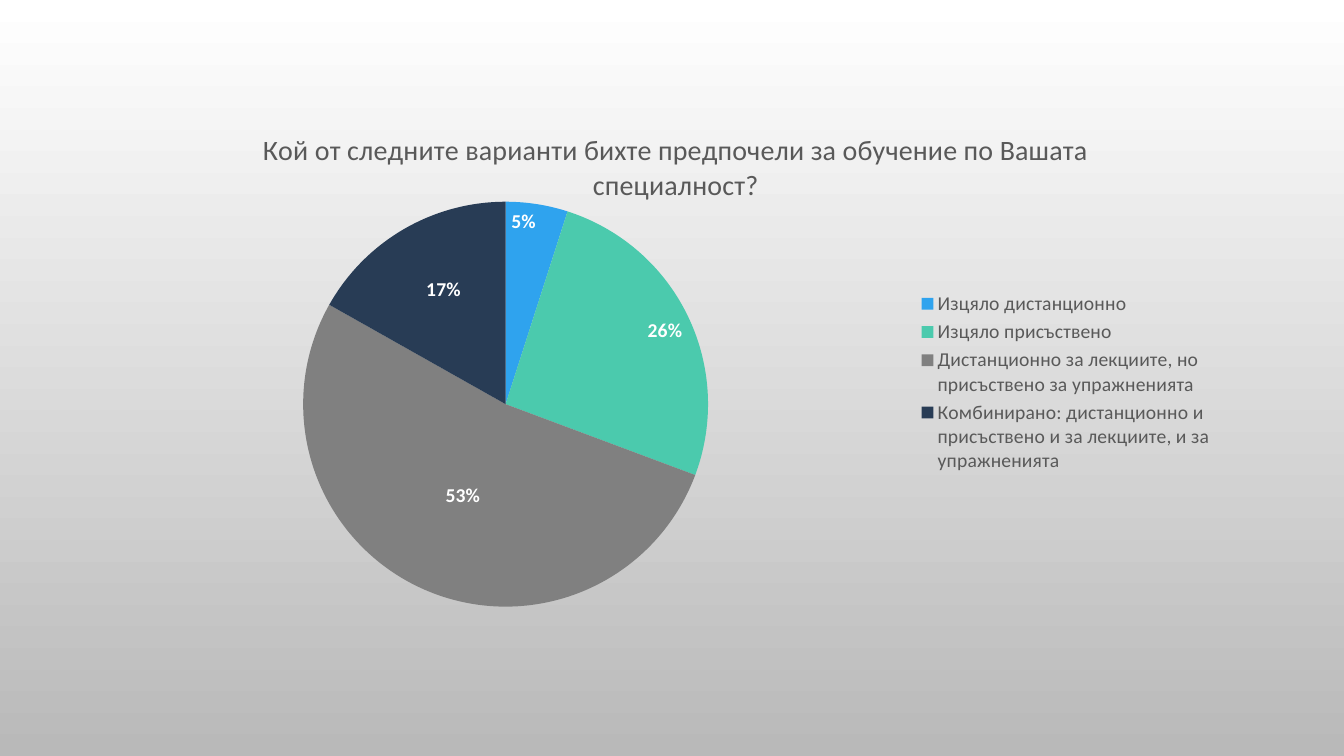
from lxml.etree import SubElement
from pptx import Presentation
from pptx.chart.data import CategoryChartData as ChartData
from pptx.dml.color import RGBColor
from pptx.enum.chart import XL_CHART_TYPE as Kind
from pptx.enum.chart import XL_LABEL_POSITION as Spot
from pptx.enum.chart import XL_LEGEND_POSITION as Side
from pptx.oxml import parse_xml
from pptx.oxml.ns import nsdecls, qn
from pptx.util import Cm, Pt

TITLE = "Кой от следните варианти бихте предпочели за обучение по Вашата специалност?"
SHARES = [
    ("Изцяло дистанционно", 5, "2FA3EE", Spot.INSIDE_END),
    ("Изцяло присъствено", 26, "4BCAAD", Spot.INSIDE_END),
    ("Дистанционно за лекциите, но присъствено за упражненията", 53, "808080", Spot.CENTER),
    ("Комбинирано: дистанционно и присъствено и за лекциите, и за упражненията", 17, "283C55", Spot.CENTER),
]
FORMAT = '0"%"'


def paint(code):
    return RGBColor.from_string(code)


def style(font, size, color, bold=False):
    font.name = "Calibri"
    font.size = Pt(size)
    font.bold = bold
    font.color.rgb = paint(color)


def write(frame, text, **look):
    frame.text = text
    style(frame.paragraphs[0].runs[0].font, **look)


def place(parent, index, **edges):
    layout = parse_xml(f"<c:layout {nsdecls('c')}/>")
    manual = SubElement(layout, qn("c:manualLayout"))
    for name, value in edges.items():
        SubElement(manual, qn(f"c:{name}"), val=str(value))
    parent.insert(index, layout)


class Deck:
    gray = "595959"
    white = "FFFFFF"

    def __init__(self):
        self.prs = Presentation()
        self.prs.slide_width = Cm(33.87)
        self.prs.slide_height = Cm(19.05)
        self.slide = self.prs.slides.add_slide(self.prs.slide_layouts[6])

    def shade(self, top, base):
        fill = self.slide.background.fill
        fill.gradient()
        fill.gradient_angle = 270
        for stop, color, spot in zip(fill.gradient_stops, (top, base), (0, 1)):
            stop.color.rgb = paint(color)
            stop.position = spot

    def pie(self, title, shares, left, top, width, height):
        data = ChartData(number_format=FORMAT)
        data.categories = [name for name, *_ in shares]
        data.add_series("Series 1", [share for _, share, *_ in shares])
        box = Cm(left), Cm(top), Cm(width), Cm(height)
        chart = self.slide.shapes.add_chart(Kind.PIE, *box, data).chart
        style(chart.font, 10, "000000")

        chart.has_title = True
        write(chart.chart_title.text_frame, title, size=20, color=self.gray)
        chart.has_legend = True
        chart.legend.position = Side.RIGHT
        chart.legend.include_in_layout = False
        style(chart.legend.font, 14, self.gray)

        area = chart._chartSpace.chart.plotArea
        for old in area.findall(qn("c:layout")):
            area.remove(old)
        place(area, 0, layoutTarget="inner", xMode="edge", yMode="edge",
              x=0.16, y=0.17, w=0.37, h=0.74)
        self.label(chart.plots[0], shares)

    def label(self, plot, shares):
        plot.vary_by_categories = True
        series = plot.series[0]
        labels = series.data_labels
        labels.show_value = True
        labels.number_format = FORMAT
        labels.number_format_is_linked = False
        style(labels.font, 14, self.white, True)
        for index, (_, _, color, spot) in enumerate(shares):
            point = series.points[index]
            point.format.fill.solid()
            point.format.fill.fore_color.rgb = paint(color)
            point.data_label.position = spot
            style(point.data_label.font, 14, self.white, True)
        tags = series._element.findall(".//" + qn("c:dLbl"))
        for tag in tags:
            tag.insert(1, parse_xml(
                f"<c:numFmt {nsdecls('c')} formatCode='{FORMAT}' sourceLinked='0'/>"))
        place(tags[-1], 1, x=-0.01, y=-0.05)

    def save(self):
        self.prs.save("out.pptx")


def main():
    deck = Deck()
    deck.shade("FFFFFF", "B9B9B9")
    deck.pie(TITLE, SHARES, 3.2, 2.74, 27.66, 13.79)
    deck.save()


if __name__ == "__main__":
    main()
